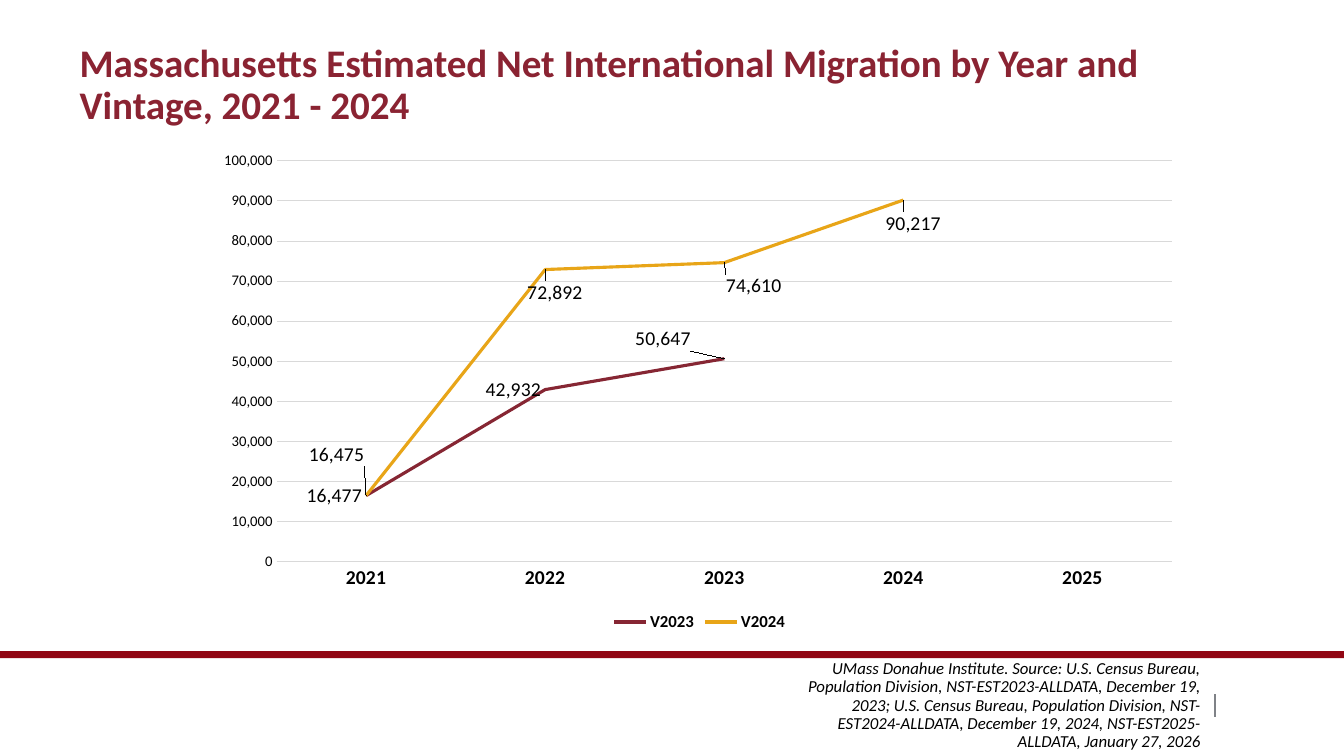
import pptx
import pptx.chart.data
import pptx.dml.color
import pptx.enum.chart
import pptx.enum.shapes
import pptx.enum.text
import pptx.oxml.ns
import pptx.oxml.xmlchemy
import pptx.util

Inches = pptx.util.Inches
Pt = pptx.util.Pt
RGBColor = pptx.dml.color.RGBColor
Place = pptx.enum.chart.XL_LABEL_POSITION
Tick = pptx.enum.chart.XL_TICK_MARK
make = pptx.oxml.xmlchemy.OxmlElement
qn = pptx.oxml.ns.qn

BLACK = RGBColor(0x00, 0x00, 0x00)
TITLE = RGBColor(0x8A, 0x23, 0x32)
BAR = RGBColor(0x91, 0x05, 0x13)
RULE = RGBColor(0x7F, 0x82, 0x87)
GRID = RGBColor(0xD9, 0xD9, 0xD9)
MAROON = RGBColor(0x86, 0x26, 0x33)
GOLD = RGBColor(0xE8, 0xA5, 0x18)


def style(font, size, color=BLACK, bold=False, italic=False):
    font.name = "Calibri"
    font.size = Pt(size)
    font.color.rgb = color
    font.bold = bold
    font.italic = italic


def layout(parent, index, tags):
    """Give a chart part a manual layout, in fractions of the chart."""
    for old in parent.findall(qn("c:layout")):
        parent.remove(old)
    node = make("c:layout")
    manual = make("c:manualLayout")
    node.append(manual)
    for tag, value in tags.items():
        item = make("c:" + tag)
        item.set("val", str(value))
        manual.append(item)
    parent.insert(index, node)


deck = pptx.Presentation()
deck.slide_width = Inches(13.33)
deck.slide_height = Inches(7.5)
slide = deck.slides.add_slide(deck.slide_layouts[1])

# Footer rule and bar
rule = slide.shapes.add_connector(
    pptx.enum.shapes.MSO_CONNECTOR.STRAIGHT,
    Inches(12.05), Inches(6.89), Inches(12.05), Inches(7.11))
rule.line.color.rgb = RULE
rule.line.width = Pt(1.25)
rule._element.spPr.append(make("a:effectLst"))

bar = slide.shapes.add_shape(
    pptx.enum.shapes.MSO_SHAPE.RECTANGLE,
    0, Inches(6.46), Inches(13.33), Inches(0.07))
bar.shadow.inherit = False
bar.fill.solid()
bar.fill.fore_color.rgb = BAR
bar.line.fill.background()

# Title
title = slide.shapes.title
title.left, title.top = Inches(0.69), Inches(0.81)
title.width, title.height = Inches(11.97), Inches(0.75)
frame = title.text_frame
frame.text = ("Massachusetts Estimated Net International Migration "
              "by Year and Vintage, 2021 - 2024")
frame.auto_size = pptx.enum.text.MSO_AUTO_SIZE.NONE
frame.vertical_anchor = pptx.enum.text.MSO_ANCHOR.BOTTOM
frame.margin_bottom = Inches(0.29)
para = frame.paragraphs[0]
para.alignment = pptx.enum.text.PP_ALIGN.LEFT
para.line_spacing = 0.9
style(para.runs[0].font, 27.9, TITLE, bold=True)

# Source note
note = slide.placeholders[1]
note.left, note.top = Inches(7.9), Inches(6.89)
note.width, note.height = Inches(4.11), Inches(0.22)
frame = note.text_frame
frame.text = (
    "UMass Donahue Institute. Source: U.S. Census Bureau, Population "
    "Division, NST-EST2023-ALLDATA, December 19, 2023; U.S. Census Bureau, "
    "Population Division, NST-EST2024-ALLDATA, December 19, 2024, "
    "NST-EST2025-ALLDATA, January 27, 2026")
frame.auto_size = pptx.enum.text.MSO_AUTO_SIZE.NONE
frame.vertical_anchor = pptx.enum.text.MSO_ANCHOR.MIDDLE
para = frame.paragraphs[0]
props = para._p.get_or_add_pPr()
props.set("marL", "0")
props.set("indent", "0")
props.append(make("a:buNone"))
para.alignment = pptx.enum.text.PP_ALIGN.RIGHT
para.line_spacing = 0.9
para.space_before = Pt(0)
style(para.runs[0].font, 12, italic=True)

# Line chart
data = pptx.chart.data.CategoryChartData(number_format="#,##0")
data.categories = ["2021", "2022", "2023", "2024", "2025"]
data.add_series("V2023", [16477, 42932, 50647, None, None])
data.add_series("V2024", [16475, 72892, 74610, 90217, None])
chart = slide.shapes.add_chart(
    pptx.enum.chart.XL_CHART_TYPE.LINE,
    Inches(2.06), Inches(1.4), Inches(9.76), Inches(4.91), data).chart
chart.has_title = False
style(chart.font, 10.5)
layout(chart._chartSpace.chart.plotArea, 0, {
    "layoutTarget": "inner", "xMode": "edge", "yMode": "edge",
    "x": 0.07, "y": 0.04, "w": 0.91, "h": 0.81})

chart.has_legend = True
chart.legend.position = pptx.enum.chart.XL_LEGEND_POSITION.BOTTOM
chart.legend.include_in_layout = False
style(chart.legend.font, 12, bold=True)

years = chart.category_axis
years.major_tick_mark = Tick.NONE
years.format.line.color.rgb = GRID
years.format.line.width = Pt(0.75)
style(years.tick_labels.font, 14, bold=True)

scale = chart.value_axis
scale.minimum_scale = 0
scale.maximum_scale = 100000
scale.major_unit = 10000
scale.major_tick_mark = Tick.NONE
scale.format.line.fill.background()
scale.major_gridlines.format.line.color.rgb = GRID
scale.major_gridlines.format.line.width = Pt(0.75)
scale.tick_labels.number_format = "#,##0"
scale.tick_labels.number_format_is_linked = False
style(scale.tick_labels.font, 10.5)

# Colour, label side, and shifts of single labels by point
looks = [
    (MAROON, Place.LEFT, {2: (-0.03, -0.04)}),
    (GOLD, Place.ABOVE, {0: (-0.03, -0.05), 1: (0.01, 0.08),
                         2: (0.03, 0.08), 3: (0.01, 0.08)}),
]
for line, (color, side, shifts) in zip(chart.plots[0].series, looks):
    line.smooth = False
    line.format.line.color.rgb = color
    line.format.line.width = Pt(2.25)
    labels = line.data_labels
    labels.show_value = True
    labels.number_format = "#,##0"
    labels.number_format_is_linked = False
    labels.position = side
    style(labels.font, 14)
    for point in shifts:
        label = line.points[point].data_label
        style(label.font, 14)
        label.position = side
    for node in labels._element.findall(qn("c:dLbl")):
        x, y = shifts[int(node.find(qn("c:idx")).get("val"))]
        layout(node, 1, {"x": x, "y": y})

deck.save("out.pptx")
